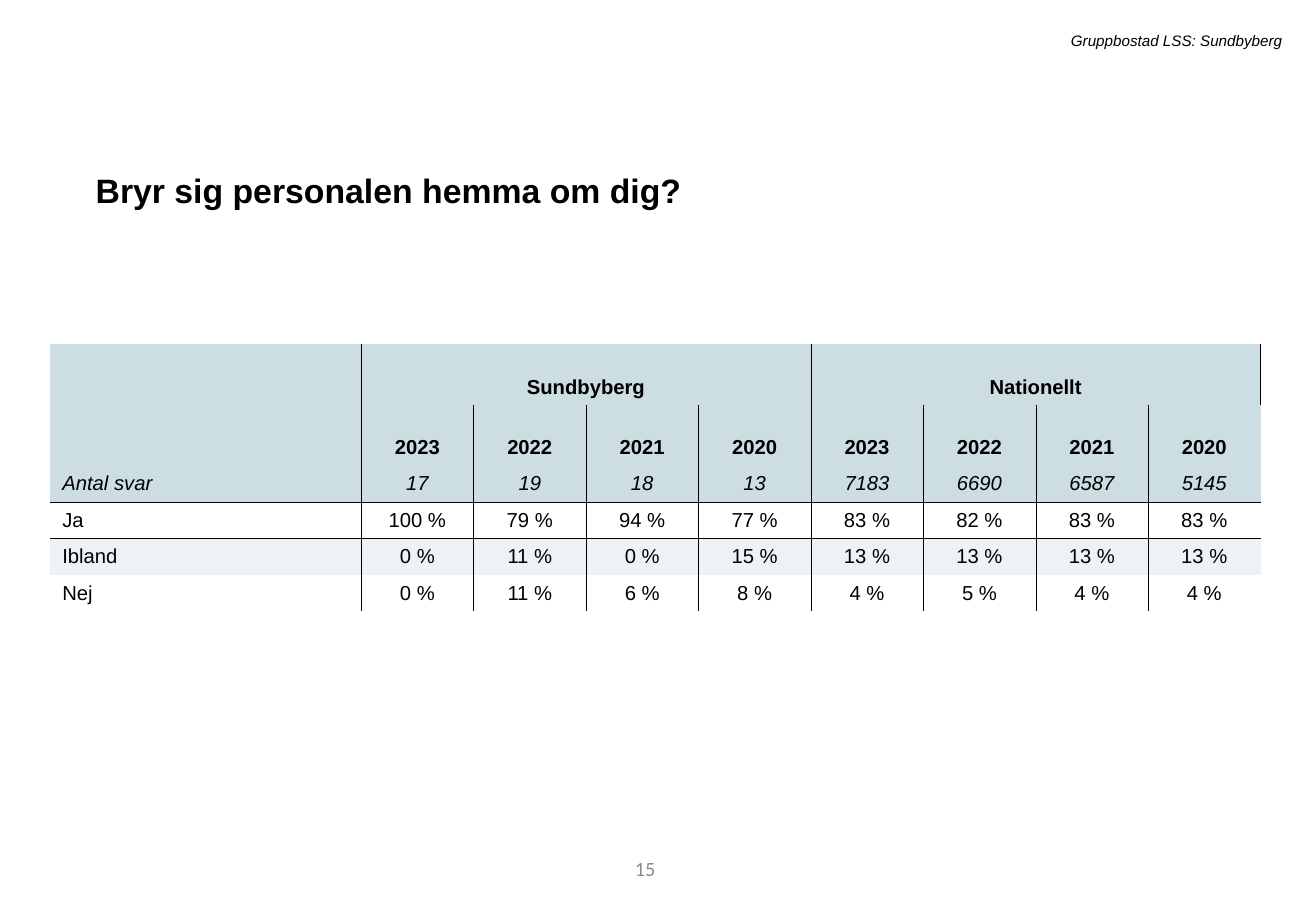
from dataclasses import dataclass

from lxml.etree import SubElement
from pptx import Presentation
from pptx.dml.color import RGBColor
from pptx.enum.text import MSO_ANCHOR, PP_ALIGN
from pptx.oxml.ns import qn
from pptx.util import Cm, Pt


@dataclass(frozen=True)
class Theme:
    font: str = "Arial"
    number_font: str = "Calibri"
    ink: str = "000000"
    muted: str = "8C8C8C"
    header_fill: str = "CCDEE1"
    band_fill: str = "EDF3F4"
    title_size: float = 20
    table_size: float = 12
    label_size: float = 9
    border_width: float = 0.25


theme = Theme()


def write(frame, text, size, font=theme.font, color=theme.ink, bold=False,
          italic=False, align=PP_ALIGN.LEFT):
    frame.word_wrap = True
    para = frame.paragraphs[0]
    para.alignment = align
    span = para.add_run()
    span.text = text
    span.font.name = font
    span.font.size = Pt(size)
    span.font.bold = bold
    span.font.italic = italic
    span.font.color.rgb = RGBColor.from_string(color)
    return para


def add_border(cell, side):
    line = SubElement(cell._tc.get_or_add_tcPr(), qn(f"a:ln{side}"),
                      w=str(Pt(theme.border_width)))
    fill = SubElement(line, qn("a:solidFill"))
    SubElement(fill, qn("a:srgbClr"), val=theme.ink)


deck = Presentation()
deck.slide_width, deck.slide_height = Cm(27.51), Cm(19.05)
page = deck.slides.add_slide(deck.slide_layouts[6])

number_box = page.shapes.add_textbox(Cm(7.75), Cm(17.65), Cm(6.2), Cm(1.02))
number_box.text_frame.vertical_anchor = MSO_ANCHOR.MIDDLE
write(number_box.text_frame, "15", theme.table_size, font=theme.number_font,
      color=theme.muted, align=PP_ALIGN.RIGHT)

title_box = page.shapes.add_textbox(Cm(1.75), Cm(3.25), Cm(23.88), Cm(1.19))
title = write(title_box.text_frame, "Bryr sig personalen hemma om dig?",
              theme.title_size, bold=True)
title.line_spacing = 1.2
title.space_before = Pt(10)

label_box = page.shapes.add_textbox(Cm(4.55), Cm(0.53), Cm(22.5), Cm(0.64))
write(label_box.text_frame, "Gruppbostad LSS: Sundbyberg", theme.label_size,
      italic=True, align=PP_ALIGN.RIGHT)

years = ["2023", "2022", "2021", "2020"]
rows = [
    ["", "Sundbyberg", "", "", "", "Nationellt", "", "", ""],
    ["", *years, *years],
    ["Antal svar", "17", "19", "18", "13", "7183", "6690", "6587", "5145"],
    ["Ja", "100 %", "79 %", "94 %", "77 %", "83 %", "82 %", "83 %", "83 %"],
    ["Ibland", "0 %", "11 %", "0 %", "15 %", "13 %", "13 %", "13 %", "13 %"],
    ["Nej", "0 %", "11 %", "6 %", "8 %", "4 %", "5 %", "4 %", "4 %"],
]
row_heights = [1.27] * 2 + [0.76] * 4
column_widths = [6.5] + [2.35] * 8
group_row, year_row, count_row, band_row = 0, 1, 2, 4
group_starts = [1, 5]

table = page.shapes.add_table(
    len(rows), len(column_widths), Cm(1.05), Cm(7.19),
    Cm(sum(column_widths)), Cm(sum(row_heights))).table
table.first_row = table.horz_banding = False
no_grid_style = "{2D5ABB26-0587-4C30-8999-92F81FD0307C}"
table._tbl.tblPr.find(qn("a:tableStyleId")).text = no_grid_style

for column, width in zip(table.columns, column_widths):
    column.width = Cm(width)
for row, height in zip(table.rows, row_heights):
    row.height = Cm(height)
for start in group_starts:
    table.cell(group_row, start).merge(table.cell(group_row, start + len(years) - 1))

for row_index, texts in enumerate(rows):
    for column_index, text in enumerate(texts):
        cell = table.cell(row_index, column_index)
        if cell.is_spanned:
            continue
        if column_index > 0:
            add_border(cell, "L")
        if row_index == group_row or column_index < len(texts) - 1:
            add_border(cell, "R")
        if row_index == count_row + 1:
            add_border(cell, "T")
        if row_index == count_row:
            add_border(cell, "B")
        if row_index <= count_row or row_index == band_row:
            cell.fill.solid()
            cell.fill.fore_color.rgb = RGBColor.from_string(
                theme.band_fill if row_index == band_row else theme.header_fill)
        else:
            cell.fill.background()
        cell.vertical_anchor = (
            MSO_ANCHOR.BOTTOM if row_index <= year_row else MSO_ANCHOR.MIDDLE)
        if text:
            write(cell.text_frame, text, theme.table_size,
                  bold=row_index <= year_row, italic=row_index == count_row,
                  align=PP_ALIGN.CENTER if column_index else PP_ALIGN.LEFT)

deck.save("out.pptx")
